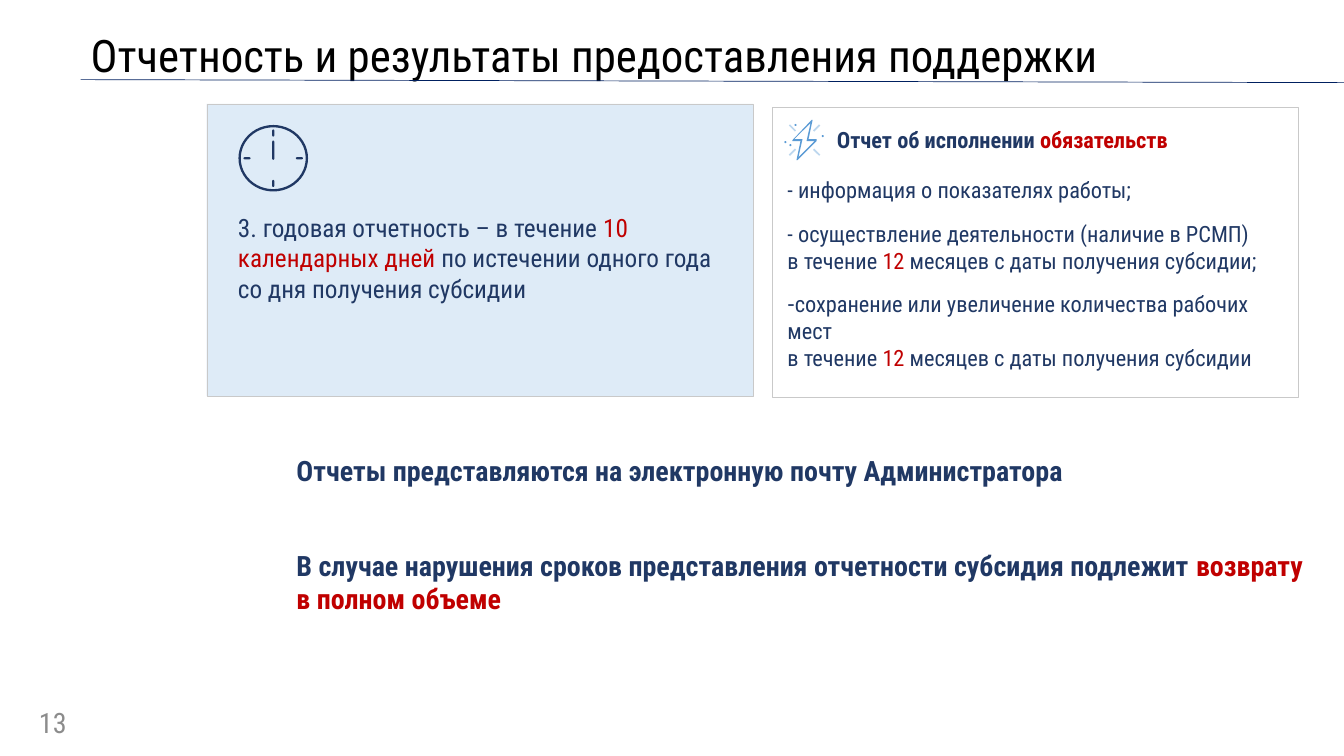
from lxml.etree import SubElement
from pptx import Presentation
from pptx.dml.color import RGBColor
from pptx.enum.shapes import MSO_CONNECTOR, MSO_SHAPE
from pptx.enum.text import MSO_ANCHOR, MSO_AUTO_SIZE, PP_ALIGN
from pptx.oxml.ns import qn
from pptx.util import Inches, Pt

NAVY = RGBColor(0x20, 0x38, 0x64)
RED = RGBColor(0xC0, 0x00, 0x00)
BLACK = RGBColor(0x00, 0x00, 0x00)
WHITE = RGBColor(0xFF, 0xFF, 0xFF)
GRAY = RGBColor(0x8C, 0x8C, 0x8C)
BORDER = RGBColor(0xC9, 0xC9, 0xC9)
PALE_BLUE = RGBColor(0xDE, 0xEB, 0xF7)
LIGHT_BLUE = RGBColor(0xBD, 0xD7, 0xEE)
BLUE = RGBColor(0x5B, 0x9B, 0xD5)
RULE_BLUE = RGBColor(0x00, 0x20, 0x60)


def write_text(paragraph, *parts, size=18, color=NAVY, bold=False, after=0,
               align=PP_ALIGN.LEFT, bullet=None, spacing=None):
    """Each part is a string, or a (string, color) pair; a newline breaks the line."""
    properties = paragraph._p.get_or_add_pPr()
    properties.set("marL", "0")
    properties.set("indent", "0")
    if bullet:
        SubElement(properties, qn("a:buChar")).set("char", bullet)
    else:
        SubElement(properties, qn("a:buNone"))
    paragraph.alignment = align
    paragraph.space_before = Pt(0)
    paragraph.space_after = Pt(after)
    if spacing:
        paragraph.line_spacing = spacing
    for part in parts:
        text, run_color = part if isinstance(part, tuple) else (part, color)
        for index, line in enumerate(text.split("\n")):
            if index:
                paragraph.add_line_break()
            run = paragraph.add_run()
            run.text = line
            run.font.name = SlideBuilder.font
            run.font.size = Pt(size)
            run.font.bold = bold
            run.font.color.rgb = run_color


class SlideBuilder:
    font = "Roboto Condensed"

    def __init__(self, presentation):
        self.slide = presentation.slides.add_slide(presentation.slide_layouts[1])
        self.shapes = self.slide.shapes

    def paint(self, shape, fill, line=None):
        shape.shadow.inherit = False
        shape.fill.solid()
        shape.fill.fore_color.rgb = fill
        if line:
            shape.line.color.rgb = line
            shape.line.width = Pt(0.25)
        else:
            shape.line.fill.background()
        return shape

    def shape(self, kind, left, top, width, height, fill, line=None):
        shape = self.shapes.add_shape(
            kind, Inches(left), Inches(top), Inches(width), Inches(height))
        return self.paint(shape, fill, line)

    def outline(self, contours, fill):
        builder = None
        for first, *others in contours:
            start = [Inches(value) for value in first]
            if builder is None:
                builder = self.shapes.build_freeform(*start)
            else:
                builder.move_to(*start)
            builder.add_line_segments([(Inches(x), Inches(y)) for x, y in others])
        return self.paint(builder.convert_to_shape(), fill)

    def line(self, start, end, color, width):
        connector = self.shapes.add_connector(
            MSO_CONNECTOR.STRAIGHT, *[Inches(value) for value in (*start, *end)])
        connector.line.color.rgb = color
        connector.line.width = Pt(width)
        SubElement(connector._element.spPr, qn("a:effectLst"))

    def frame(self, shape, left_inset=0.0, anchor=MSO_ANCHOR.TOP):
        frame = shape.text_frame
        frame.word_wrap = True
        frame.auto_size = MSO_AUTO_SIZE.NONE
        frame.vertical_anchor = anchor
        frame.margin_left = Inches(left_inset)
        frame.margin_right = Inches(0.1)
        frame.margin_top = frame.margin_bottom = Inches(0.05)
        return frame

    def text(self, left, top, width, height, *parts, left_inset=0.0,
             anchor=MSO_ANCHOR.TOP, **style):
        box = self.shapes.add_textbox(
            Inches(left), Inches(top), Inches(width), Inches(height))
        write_text(self.frame(box, left_inset, anchor).paragraphs[0], *parts, **style)

    def placeholder(self, index, left, top, width, height, **frame_style):
        shape = self.slide.placeholders[index]
        shape.left, shape.top = Inches(left), Inches(top)
        shape.width, shape.height = Inches(width), Inches(height)
        self.shapes._spTree.append(shape._element)  # bring to front
        return self.frame(shape, **frame_style)

    def clock(self, center_x, center_y):
        ring = self.shape(MSO_SHAPE.DONUT, center_x - 0.345, center_y - 0.33,
                          0.69, 0.66, NAVY)
        ring.adjustments[0] = 0.035
        marks = [(0, -0.25, 0.02, 0.07), (0, 0.25, 0.02, 0.07),
                 (-0.26, 0, 0.07, 0.02), (0.26, 0, 0.07, 0.02),
                 (0, -0.08, 0.02, 0.19)]
        for x, y, width, height in marks:
            mark = self.shape(MSO_SHAPE.ROUNDED_RECTANGLE, center_x + x - width / 2,
                              center_y + y - height / 2, width, height, NAVY)
            mark.adjustments[0] = 0.5

    def lightning(self, center_x, center_y):
        outer = [(8.1, 1.38), (8.02, 1.38), (8.06, 1.19), (8.05, 1.19), (7.86, 1.39),
                 (7.86, 1.4), (7.94, 1.4), (7.9, 1.59), (7.91, 1.59), (8.1, 1.4)]
        inner = [(7.92, 1.56), (7.96, 1.38), (7.88, 1.38), (8.04, 1.22),
                 (8, 1.4), (8.08, 1.4)]
        self.outline([outer, inner], BLUE)
        for x in (-1, 1):
            for y in (-1, 1):
                self.line((center_x + x * 0.09, center_y + y * 0.09),
                          (center_x + x * 0.15, center_y + y * 0.15), LIGHT_BLUE, 1.25)
        for left, top in [(7.83, 1.43), (7.78, 1.4), (8.15, 1.34), (7.88, 1.23)]:
            self.shape(MSO_SHAPE.OVAL, left, top, 0.02, 0.02, BLUE)


def main():
    presentation = Presentation()
    presentation.slide_width = Inches(13.33)
    presentation.slide_height = Inches(7.5)
    builder = SlideBuilder(presentation)

    # Title with its rule
    title = builder.placeholder(0, 0.8, 0.22, 11.5, 0.71, left_inset=0.1,
                                anchor=MSO_ANCHOR.MIDDLE)
    write_text(title.paragraphs[0], "Отчетность и результаты предоставления поддержки",
               size=32, color=BLACK, spacing=0.9)
    builder.line((0.8, 0.79), (13.33, 0.82), RULE_BLUE, 0.5)

    # Annual report card
    builder.shape(MSO_SHAPE.RECTANGLE, 2.05, 1.03, 5.42, 2.9, PALE_BLUE, BORDER)
    builder.clock(2.71, 1.57)
    builder.text(2.36, 2.06, 5.09, 1.2, "3. годовая отчетность – в течение ",
                 ("10 календарных дней ", RED),
                 "по истечении одного года со дня получения субсидии")

    # Obligations card
    builder.shape(MSO_SHAPE.RECTANGLE, 7.66, 1.06, 5.22, 2.88, WHITE, BORDER)
    builder.lightning(7.98, 1.39)
    builder.text(8.3, 1.2, 4, 0.37, "Отчет об исполнении ", ("обязательств", RED),
                 size=16, bold=True)
    obligations = [
        (["- информация о показателях работы;"], None),
        (["- осуществление деятельности (наличие в РСМП) \nв течение ", ("12", RED),
          " месяцев с даты получения субсидии;"], None),
        (["сохранение или увеличение количества рабочих мест \nв течение ",
          ("12 ", RED), "месяцев с даты получения субсидии"], "-"),
    ]
    body = builder.placeholder(1, 7.81, 1.7, 5.09, 2.26)
    for index, (parts, bullet) in enumerate(obligations):
        paragraph = body.add_paragraph() if index else body.paragraphs[0]
        write_text(paragraph, *parts, size=16, after=12, bullet=bullet)

    # Closing statements
    builder.text(2.94, 4.45, 8.55, 0.44,
                 "Отчеты представляются на электронную почту Администратора",
                 size=20, bold=True)
    builder.text(2.94, 5.39, 10.26, 0.78,
                 "В случае нарушения сроков представления отчетности субсидия подлежит ",
                 ("возврату в полном объеме", RED), size=20, bold=True)

    # Slide number
    builder.text(0.22, 6.97, 0.54, 0.4, "13", size=20, color=GRAY, left_inset=0.1,
                 align=PP_ALIGN.RIGHT, anchor=MSO_ANCHOR.MIDDLE)

    presentation.save("out.pptx")


if __name__ == "__main__":
    main()
